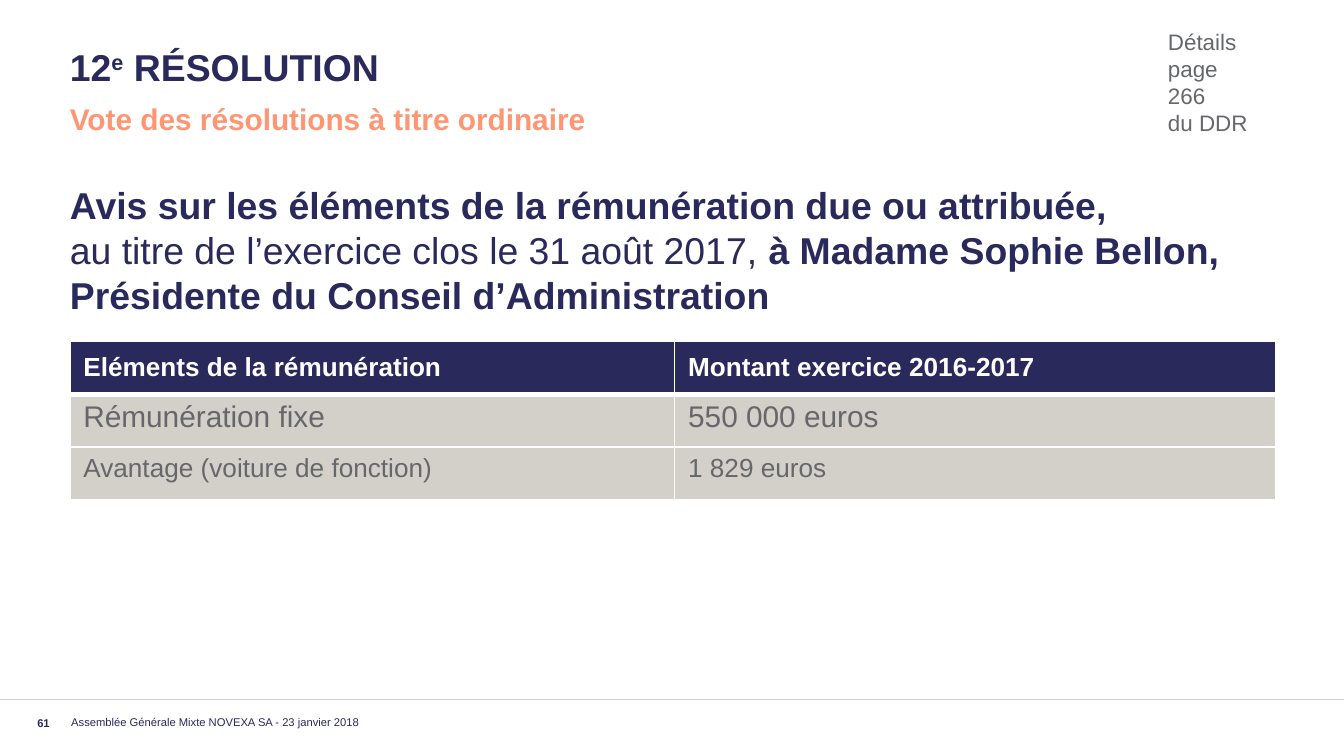
from dataclasses import dataclass

from lxml.etree import SubElement
from pptx import Presentation
from pptx.dml.color import RGBColor
from pptx.enum.shapes import MSO_CONNECTOR
from pptx.enum.text import MSO_ANCHOR as Anchor, PP_ALIGN as Align
from pptx.oxml.ns import qn
from pptx.util import Inches, Pt


@dataclass(frozen=True)
class Theme:
    font: str = "Arial"
    navy: str = "2A295C"
    coral: str = "FF9673"
    grey: str = "65676A"
    sand: str = "D3D0C9"
    white: str = "FFFFFF"
    heading: int = 20
    subtitle: int = 16
    table: int = 14
    details: int = 12
    footer: int = 6


THEME = Theme()


def add_run(paragraph, wording, size, color, bold=False, baseline=0):
    for index, line in enumerate(wording.split("\n")):
        if index:
            paragraph.add_line_break()
        if not line:
            continue
        run = paragraph.add_run()
        run.text = line
        run.font.name = THEME.font
        run.font.size = Pt(size)
        run.font.bold = bold
        run.font.color.rgb = RGBColor.from_string(color)
        if baseline:
            run.font._element.set("baseline", str(baseline * 1000))


def add_text(slide, box, runs, size, color, anchor=Anchor.TOP,
             align=Align.LEFT, inset=0, spacing=0):
    frame = slide.shapes.add_textbox(*map(Inches, box)).text_frame
    frame.word_wrap = True
    frame.vertical_anchor = anchor
    frame.margin_left = frame.margin_right = 0
    frame.margin_top = frame.margin_bottom = Inches(inset)
    paragraph = frame.paragraphs[0]
    paragraph.alignment = align
    paragraph.space_before = paragraph.space_after = Pt(spacing)
    for wording, *style in runs:
        add_run(paragraph, wording, size, color, *style)


def add_rule(slide, y):
    rule = slide.shapes.add_connector(
        MSO_CONNECTOR.STRAIGHT, 0, Inches(y), Inches(10), Inches(y))
    rule.line.color.rgb = RGBColor.from_string(THEME.sand)
    rule.line.width = Pt(0.25)
    SubElement(rule._element.spPr, qn("a:effectLst"))


def set_borders(cell, widths):
    properties = cell._tc.get_or_add_tcPr()
    for index, (side, width) in enumerate(widths.items()):
        border = properties.makeelement(qn(f"a:ln{side}"), {"w": str(Pt(width))})
        fill = SubElement(border, qn("a:solidFill"))
        SubElement(fill, qn("a:srgbClr"), val=THEME.white)
        properties.insert(index, border)


def add_pay_table(slide, box, widths, rows):
    table = slide.shapes.add_table(
        len(rows), len(widths), *map(Inches, box)).table
    for column, width in zip(table.columns, widths):
        column.width = Inches(width)
    for index, (size, *wordings) in enumerate(rows):
        header = index == 0
        table.rows[index].height = Inches(box[3] / len(rows))
        for cell, wording in zip(table.rows[index].cells, wordings):
            cell.fill.solid()
            cell.fill.fore_color.rgb = RGBColor.from_string(
                THEME.navy if header else THEME.sand)
            cell.vertical_anchor = Anchor.MIDDLE if header else Anchor.TOP
            set_borders(cell, {"L": 1, "R": 1, "T": 3 if index == 1 else 1,
                               "B": 3 if header else 1})
            add_run(cell.text_frame.paragraphs[0], wording, size,
                    THEME.white if header else THEME.grey, header)


def main():
    deck = Presentation()
    deck.slide_width = Inches(10)
    deck.slide_height = deck.slide_width * 9 // 16
    slide = deck.slides.add_slide(deck.slide_layouts[6])
    left, width = 0.52, 8.97

    add_rule(slide, 5.2)
    add_text(slide, (left, 0.33, width, 0.44),
             [("12", True), ("e", True, 30), (" RÉSOLUTION", True)],
             THEME.heading, THEME.navy)
    add_text(slide, (left, 0.75, width, 0.3),
             [("Vote des résolutions à titre ordinaire", True)],
             THEME.subtitle, THEME.coral, spacing=3.8)
    add_text(slide, (left, 1.31, 9.01, 2.46), [
        ("Avis sur les éléments de la rémunération due ou attribuée, \n", True),
        ("au titre de l’exercice clos le 31 août 2017,",),
        (" à Madame Sophie Bellon, Présidente du Conseil d’Administration", True),
    ], THEME.heading, THEME.navy, inset=0.05)
    add_pay_table(slide, (left, 2.54, width, 1.18), (4.5, 4.47), [
        (THEME.table, "Eléments de la rémunération", "Montant exercice 2016-2017"),
        (THEME.subtitle, "Rémunération fixe", "550 000 euros"),
        (THEME.table, "Avantage (voiture de fonction)", "1 829 euros"),
    ])
    add_text(slide, (0.11, 5.3, 0.26, 0.13), [("61", True)],
             THEME.footer, THEME.navy, Anchor.BOTTOM, Align.RIGHT)
    add_text(slide, (0.53, 5.26, 3.82, 0.16),
             [("Assemblée Générale Mixte NOVEXA SA - 23 janvier 2018",)],
             THEME.footer, THEME.navy, Anchor.BOTTOM)
    add_text(slide, (8.69, 0.21, 0.91, 0.81),
             [("Détails page \n266\ndu DDR",)], THEME.details, THEME.grey)
    deck.save("out.pptx")


if __name__ == "__main__":
    main()
